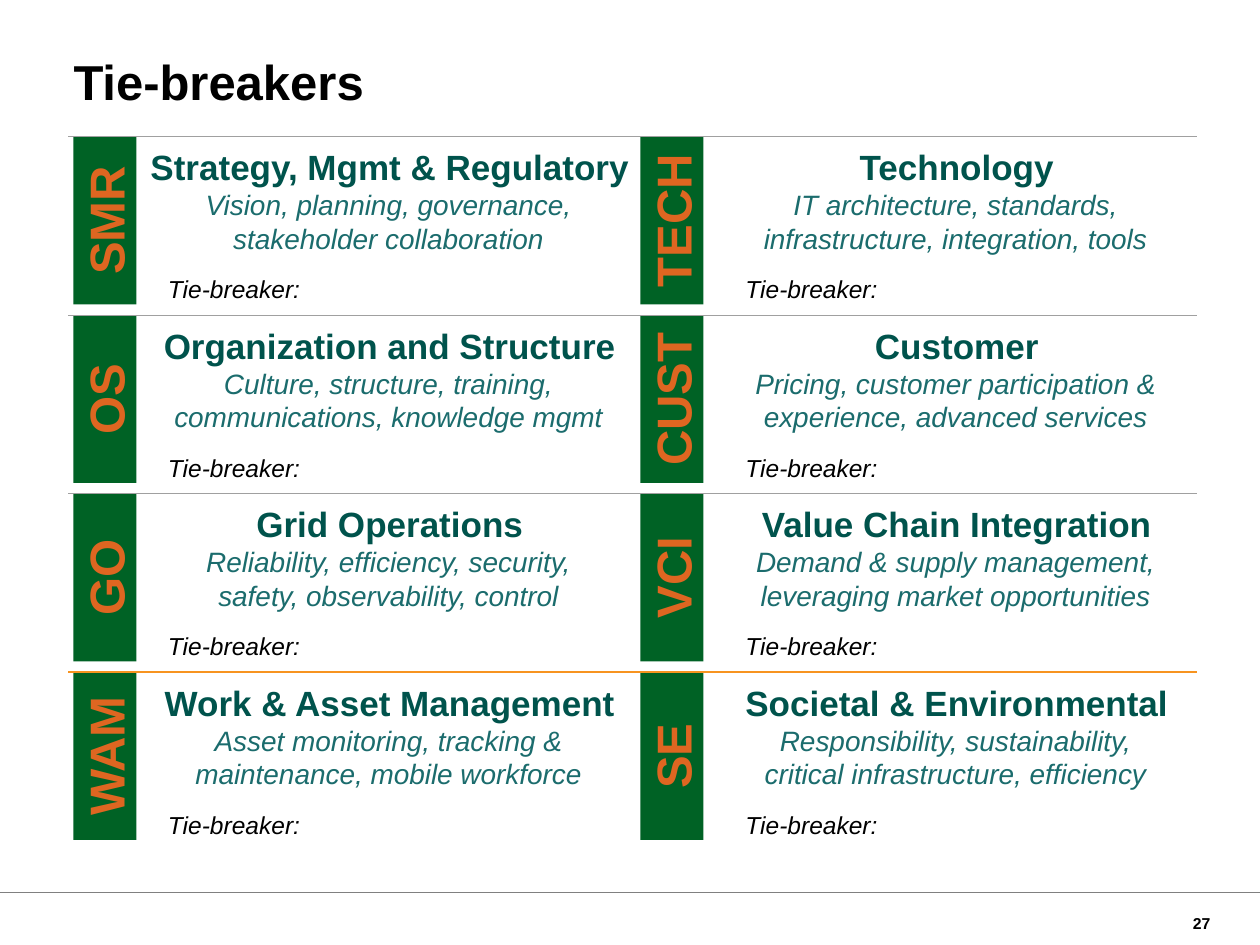
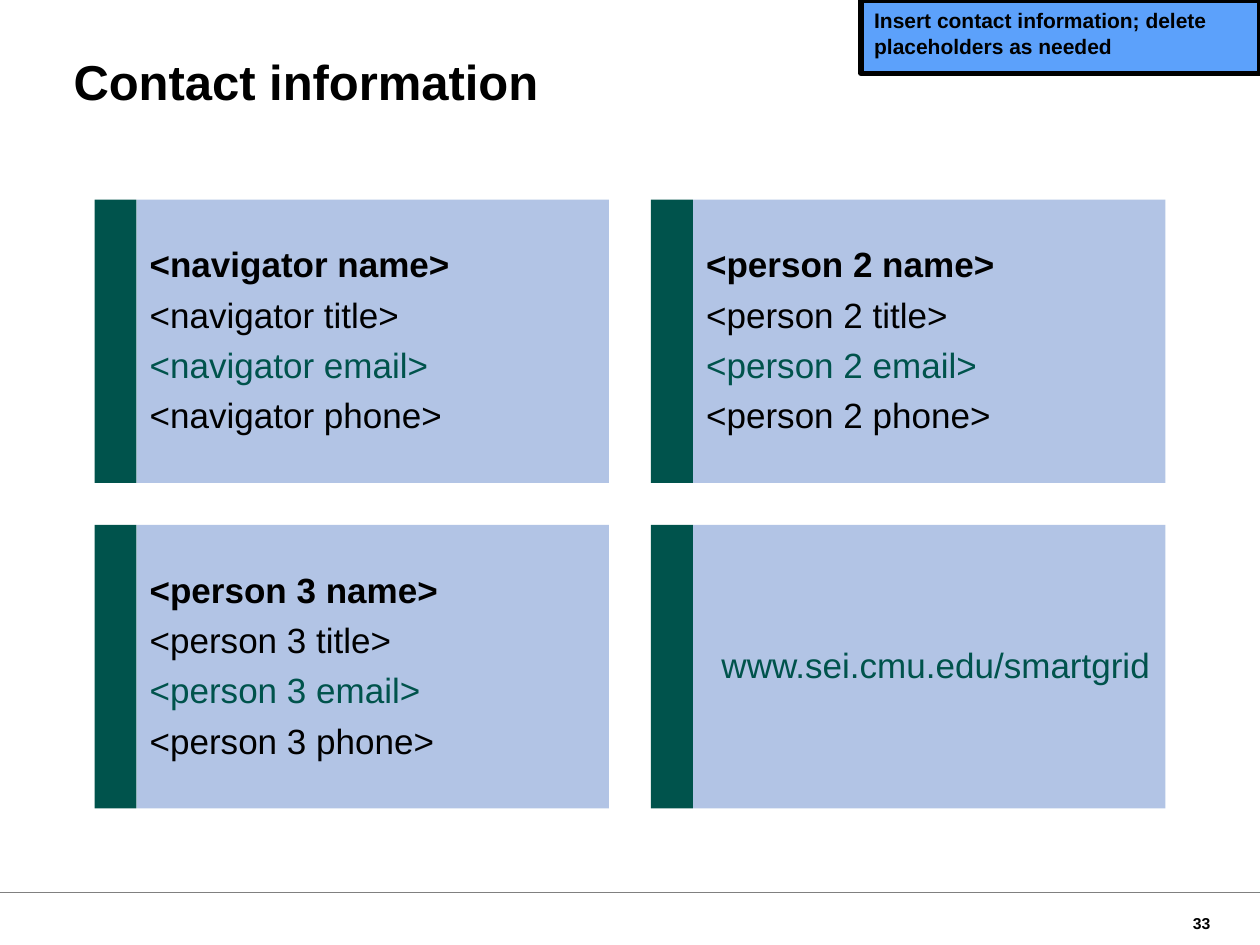
from pptx import Presentation
from pptx.util import Pt
from pptx.dml.color import RGBColor
from pptx.enum.shapes import MSO_SHAPE as Shape, MSO_CONNECTOR as Conn
from pptx.enum.text import PP_ALIGN as Align, MSO_ANCHOR as Anchor, MSO_AUTO_SIZE as Fit
from lxml.etree import SubElement
from pptx.oxml.ns import qn

PX = 9525  # EMU in one px, 96 px to the inch
FONT = "Arial"
BLACK, WHITE, GREY, ORANGE = "000000", "FFFFFF", "808080", "F79420"
GREEN, RUST, PINE, TEAL = "006225", "DE6621", "00534C", "1B6C6D"
PALE, BLUE, HAIR = "B2C4E5", "5CA1FB", "A0A0A0"


def box(shapes, at, fill=None, lines=(), edge=None, pad=(0, 0, 0, 0),
        align=Align.LEFT, anchor=Anchor.MIDDLE, lead=None, gap=0):
    """Add a filled rectangle, or a text box if it has no fill.

    Each line is (text, size, colour, style), where style is "", "b" or "i".
    """
    at = [v * PX for v in at]
    if fill:
        item = shapes.add_shape(Shape.RECTANGLE, *at)
        item.shadow.inherit = False
        item.fill.solid()
        item.fill.fore_color.rgb = RGBColor.from_string(fill)
        if edge:
            item.line.color.rgb = RGBColor.from_string(edge)
            item.line.width = Pt(3)
        else:
            item.line.fill.background()
    else:
        item = shapes.add_textbox(*at)
    frame = item.text_frame
    frame.word_wrap = True
    frame.vertical_anchor = anchor
    (frame.margin_left, frame.margin_top,
     frame.margin_right, frame.margin_bottom) = [v * PX for v in pad]
    for i, (text, size, tint, style) in enumerate(lines):
        para = frame.add_paragraph() if i else frame.paragraphs[0]
        para.alignment = align
        para.line_spacing = lead
        para.space_before = Pt(gap if i else 0)
        run = para.add_run()
        run.text = text
        font = run.font
        font.name, font.size = FONT, Pt(size)
        font.bold, font.italic = style == "b", style == "i"
        font.color.rgb = RGBColor.from_string(tint)
    return item


def rule(shapes, x1, x2, y, tint, width):
    """Add a level line without a shadow."""
    line = shapes.add_connector(Conn.STRAIGHT, x1 * PX, y * PX, x2 * PX, y * PX)
    line.line.color.rgb = RGBColor.from_string(tint)
    line.line.width = Pt(width)
    SubElement(line._element.spPr, qn("a:effectLst"))


deck = Presentation()
deck.slide_width, deck.slide_height = 960 * PX, 720 * PX

# Shared frame: title, footer rule and page number
pages = []
for name, num in (("Tie-breakers", "27"), ("Contact information", "33")):
    page = deck.slides.add_slide(deck.slide_layouts[5])
    head = page.shapes.title
    head.left, head.top, head.width, head.height = [v * PX for v in (56, 44, 856, 41)]
    frame = head.text_frame
    frame.margin_left = frame.margin_top = frame.margin_right = frame.margin_bottom = 0
    frame.vertical_anchor = Anchor.BOTTOM
    frame.auto_size = Fit.NONE
    para = frame.paragraphs[0]
    para.alignment, para.line_spacing = Align.LEFT, 0.9
    run = para.add_run()
    run.text = name
    run.font.name, run.font.size, run.font.bold = FONT, Pt(28), True
    run.font.color.rgb = RGBColor.from_string(BLACK)
    rule(page.shapes, 0, 960, 680, GREY, 1)
    box(page.shapes, (899, 691, 33, 24), lines=[(num, 9, BLACK, "b")], align=Align.CENTER)
    pages.append(page.shapes)
ties, cards = pages

# Tie-breakers: eight domains, down the left column and then the right
domains = [
    ("SMR", "Strategy, Mgmt & Regulatory",
     "Vision, planning, governance, stakeholder collaboration"),
    ("OS", "Organization and Structure",
     "Culture, structure, training, communications, knowledge mgmt"),
    ("GO", "Grid Operations",
     "Reliability, efficiency, security, safety, observability, control"),
    ("WAM", "Work & Asset Management",
     "Asset monitoring, tracking & maintenance, mobile workforce"),
    ("TECH", "Technology",
     "IT architecture, standards, infrastructure, integration, tools"),
    ("CUST", "Customer",
     "Pricing, customer participation & experience, advanced services"),
    ("VCI", "Value Chain Integration",
     "Demand & supply management, leveraging market opportunities"),
    ("SE", "Societal & Environmental",
     "Responsibility, sustainability, critical infrastructure, efficiency"),
]
TOP, STEP = 104, 136
for i, (code, name, scope) in enumerate(domains):
    col, row = divmod(i, 4)
    x, y = 56 + 432 * col, TOP + STEP * row
    group = ties.add_group_shape().shapes
    box(group, (x + 48, y, 376, 128), WHITE, [(name, 20, PINE, "b")],
        pad=(10, 7, 0, 5), align=Align.CENTER, anchor=Anchor.TOP)
    tag = box(group, (x, y, 48, 128), GREEN, [(code, 28, RUST, "b")], align=Align.CENTER)
    tag._element.txBody.bodyPr.set("vert", "vert270")
    box(group, (x + 64, y + 32, 352, 72), lines=[(scope, 16, TEAL, "i")],
        pad=(10, 7, 10, 5), align=Align.CENTER, anchor=Anchor.TOP)

# Row lines, the last one in orange
for row in range(4):
    tint, width = (ORANGE, 0.75) if row == 3 else (HAIR, 0.5)
    rule(ties, 52, 912, TOP + STEP * row, tint, width)

# Tie-breaker fields
for x in (128, 568):
    for row in range(4):
        box(ties, (x, TOP + STEP * row + 104, 344, 24), WHITE,
            [("Tie-breaker:", 14, BLACK, "i")], edge=WHITE)

# Contact cards: three people and a web address
for i, who in enumerate(("navigator", "person 2", "person 3", None)):
    row, col = divmod(i, 2)
    x, y = 72 + 424 * col, 152 + 248 * row
    if who:
        lines = [(f"<{who} name>", 20, BLACK, "b"), (f"<{who} title>", 20, BLACK, ""),
                 (f"<{who} email>", 20, PINE, ""), (f"<{who} phone>", 20, BLACK, "")]
    else:
        lines = [("www.sei.cmu.edu/smartgrid", 20, PINE, "")]
    box(cards, (x + 32, y, 360, 216), PALE, lines, pad=(10, 5, 0, 5),
        align=Align.LEFT if who else Align.CENTER, lead=0.95, gap=6)
    box(cards, (x, y, 32, 216), PINE)

# Note in the corner
box(cards, (656, 0, 304, 56), BLUE,
    [("Insert contact information; delete placeholders as needed", 12, BLACK, "b")],
    edge=BLACK, pad=(10, 6, 10, 5), anchor=Anchor.TOP)

deck.save("out.pptx")
